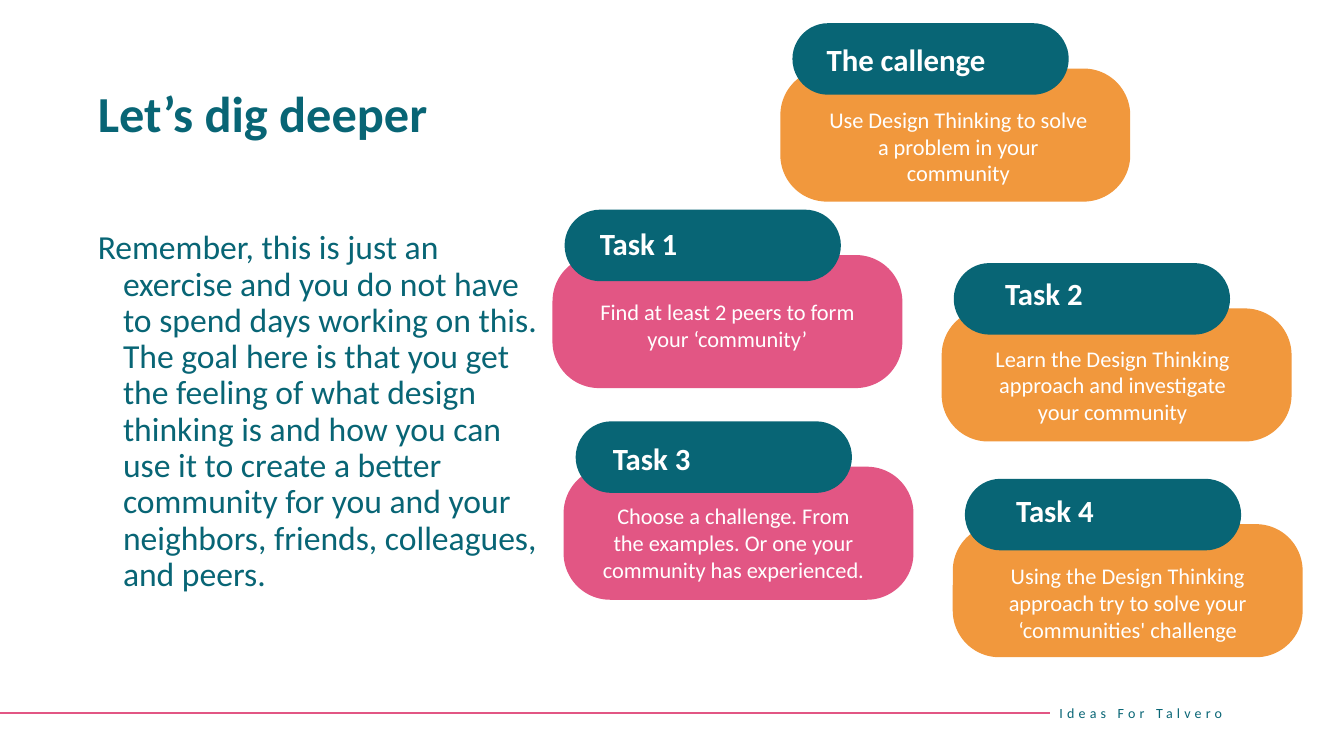
"""Build the "Let's dig deeper" slide: a title, an introduction and five task cards."""
import pptx
import pptx.dml.color
import pptx.enum.shapes
import pptx.enum.text
import pptx.oxml.ns
import pptx.util
from lxml import etree

PX = 9144
TEAL, PINK, ORANGE, WHITE = "086575", "E25684", "F1983D", "FFFFFF"
CARD_WIDTH, CARD_HEIGHT = 347, 132
TAB_WIDTH, TAB_HEIGHT = 274, 71
TAB_RIGHT, TAB_UP = 12, 45
ROUNDED = pptx.enum.shapes.MSO_SHAPE.ROUNDED_RECTANGLE
LEFT = pptx.enum.text.PP_ALIGN.LEFT
CENTER = pptx.enum.text.PP_ALIGN.CENTER
TOP = pptx.enum.text.MSO_ANCHOR.TOP
MIDDLE = pptx.enum.text.MSO_ANCHOR.MIDDLE


def color(hex_string):
    return pptx.dml.color.RGBColor.from_string(hex_string)


def write(shape, text, size, fill=WHITE, bold=False, align=LEFT, anchor=TOP,
          line_spacing=1.0, hanging=0, tracking=0):
    frame = shape.text_frame
    frame.word_wrap = True
    frame.auto_size = pptx.enum.text.MSO_AUTO_SIZE.NONE
    frame.vertical_anchor = anchor
    paragraph = frame.paragraphs[0]
    run = paragraph.add_run()
    run.text = text
    paragraph.alignment = align
    paragraph.line_spacing = line_spacing
    paragraph.space_before = pptx.util.Pt(0)
    properties = paragraph._p.get_or_add_pPr()
    properties.set("marL", str(hanging * PX))
    properties.set("indent", str(-hanging * PX))
    etree.SubElement(properties, pptx.oxml.ns.qn("a:buNone"))
    run.font.name = "Calibri"
    run.font.size = pptx.util.Pt(size)
    run.font.bold = bold
    run.font.color.rgb = color(fill)
    if tracking:
        run.font._element.set("spc", str(tracking * 100))


presentation = pptx.Presentation()
presentation.slide_width = 1333 * PX
presentation.slide_height = 750 * PX
slide = presentation.slides.add_slide(presentation.slide_layouts[1])
shapes = slide.shapes

title, body = slide.placeholders
for placeholder, top, height in ((title, 83, 88), (body, 224, 421)):
    placeholder.left, placeholder.top = 87 * PX, top * PX
    placeholder.width, placeholder.height = 460 * PX, height * PX
write(title, "Let’s dig deeper", 36, fill=TEAL, bold=True, line_spacing=0.9)
write(body, "Remember, this is just an exercise and you do not have to spend days "
      "working on this. The goal here is that you get the feeling of what design "
      "thinking is and how you can use it to create a better community for you and "
      "your neighbors, friends, colleagues, and peers.",
      24, fill=TEAL, line_spacing=0.9, hanging=25)

footer = shapes.add_textbox(1041 * PX, 687 * PX, 273 * PX, 40 * PX)
write(footer, "Ideas For Talvero", 10, fill=TEAL, anchor=MIDDLE, tracking=3)
footer_line = shapes.add_connector(
    pptx.enum.shapes.MSO_CONNECTOR.STRAIGHT, 0, 707 * PX, 1041 * PX, 707 * PX)
footer_line.end_connect(footer, 1)
footer_line.line.color.rgb = color(PINK)
footer_line.line.width = pptx.util.Pt(1.5)
etree.SubElement(footer_line._element.spPr, pptx.oxml.ns.qn("a:effectLst"))

cards = [
    (774, 68, ORANGE, "The callenge", (810, 36),
     "Use Design Thinking to solve a problem in your community", (808, 100)),
    (548, 253, PINK, "Task 1", (585, 218),
     "Find at least 2 peers to form your ‘community’", (579, 291)),
    (934, 306, ORANGE, "Task 2", (987, 268),
     "Learn the Design Thinking approach and investigate your community", (961, 337)),
    (559, 463, PINK, "Task 3", (598, 431),
     "Choose a challenge. From the examples. Or one your community has experienced.",
     (585, 493)),
    (945, 520, ORANGE, "Task 4", (998, 483),
     "Using the Design Thinking approach try to solve your ‘communities' challenge",
     (976, 553)),
]
for left, top, fill, heading, heading_at, task, task_at in cards:
    for x, y, width, height, rounding, shade in (
            (left, top, CARD_WIDTH, CARD_HEIGHT, 0.35, fill),
            (left + TAB_RIGHT, top - TAB_UP, TAB_WIDTH, TAB_HEIGHT, 0.5, TEAL)):
        shape = shapes.add_shape(ROUNDED, x * PX, y * PX, width * PX, height * PX)
        shape.adjustments[0] = rounding
        shape.shadow.inherit = False
        shape.fill.solid()
        shape.fill.fore_color.rgb = color(shade)
        shape.line.fill.background()
    x, y = heading_at
    heading_box = shapes.add_textbox(x * PX, y * PX, 222 * PX, 47 * PX)
    write(heading_box, heading, 22, bold=True)
    x, y = task_at
    task_box = shapes.add_textbox(x * PX, y * PX, 285 * PX, 91 * PX)
    write(task_box, task, 16, align=CENTER)

presentation.save("out.pptx")
